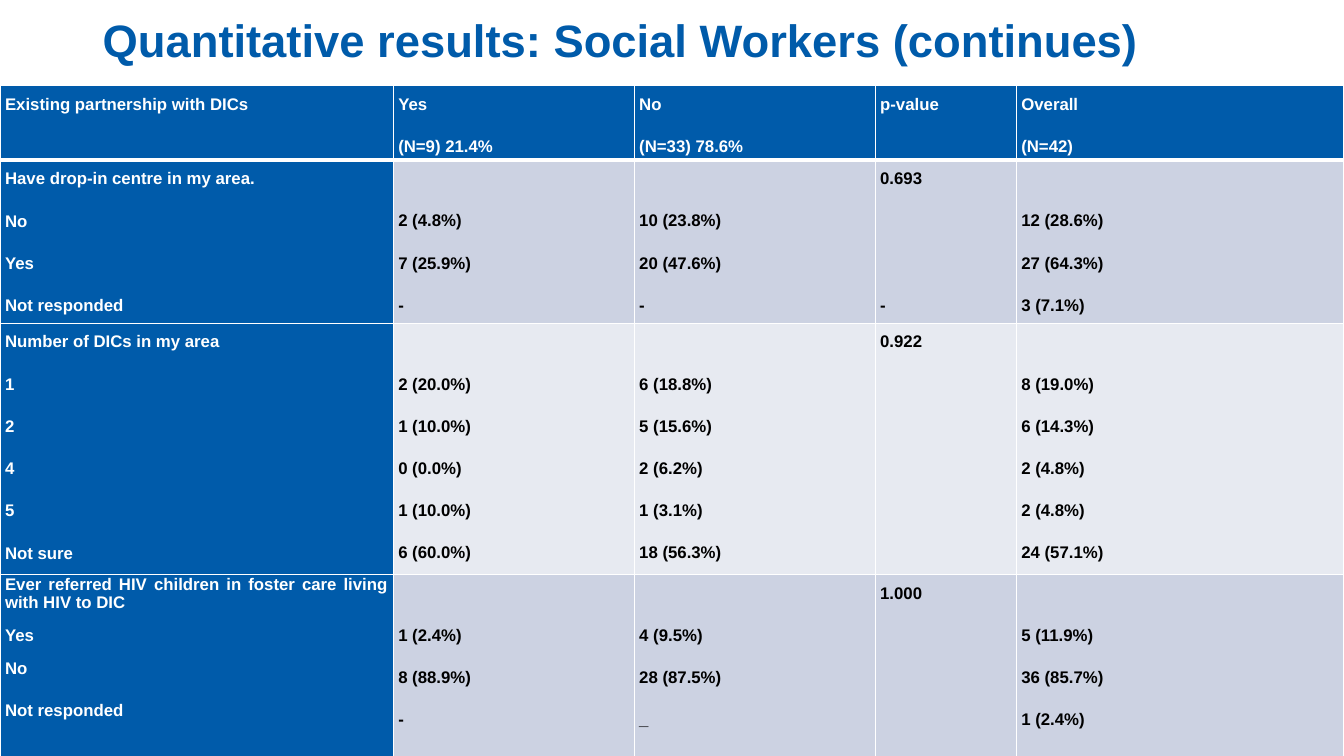
from lxml.etree import SubElement
from pptx import Presentation
from pptx.dml.color import RGBColor
from pptx.enum.text import MSO_ANCHOR, PP_ALIGN
from pptx.oxml.ns import qn
from pptx.util import Inches, Pt

HUES = {"blue": "005BAA", "white": "FFFFFF", "black": "000000",
        "dark": "CCD2E2", "light": "E7EAF1"}
STEP = 30.1  # points from one table line to the next


def write(frame, text, size=12, hue="black", align=PP_ALIGN.JUSTIFY,
          lead=1.5, after=10, tight=0):
    """Write lines split by |; an empty line becomes a gap above the next."""
    gap, first = 0, True
    for pos, line in enumerate(text.split("|")):
        if not line:
            gap += 1
            continue
        para = frame.paragraphs[0] if first else frame.add_paragraph()
        if first:
            frame.margin_top = frame.margin_top + Pt(gap * STEP)
        elif gap:
            para.space_before = Pt(gap * STEP)
        gap, first = 0, False
        para.alignment = align
        para.line_spacing = 1.0 if pos < tight else lead
        para.space_after = Pt(after)
        run = para.add_run()
        run.text = line
        run.font.name, run.font.size, run.font.bold = "Arial", Pt(size), True
        run.font.color.rgb = RGBColor.from_string(HUES[hue])


def edge(cell, top, base):
    """Draw white borders round a cell, widths in points."""
    props = cell._tc.get_or_add_tcPr()
    for tag, width in (("lnL", 1), ("lnR", 1), ("lnT", top), ("lnB", base)):
        line = SubElement(props, qn("a:" + tag), w=str(Pt(width)))
        fill = SubElement(line, qn("a:solidFill"))
        SubElement(fill, qn("a:srgbClr"), val=HUES["white"])


deck = Presentation()
deck.slide_width, deck.slide_height = Inches(13.33), Inches(7.5)
slide = deck.slides.add_slide(deck.slide_layouts[6])

# Title
title = slide.shapes.add_textbox(Inches(0.92), Inches(0.1), Inches(11.5), Inches(0.65))
title.text_frame.word_wrap = True
title.text_frame.vertical_anchor = MSO_ANCHOR.MIDDLE
write(title.text_frame, "Quantitative results: Social Workers (continues)",
      size=32.4, hue="blue", align=PP_ALIGN.LEFT, lead=0.9, after=0)

# Table data
DATA = [
    ["Existing partnership with DICs", "Yes|(N=9) 21.4%", "No|(N=33) 78.6%",
     "p-value", "Overall|(N=42)"],
    ["Have drop-in centre in my area.|No|Yes|Not responded",
     "|2 (4.8%)|7 (25.9%)|-", "|10 (23.8%)|20 (47.6%)|-", "0.693|||-",
     "|12 (28.6%)|27 (64.3%)|3 (7.1%)"],
    ["Number of DICs in my area|1|2|4|5|Not sure",
     "|2 (20.0%)|1 (10.0%)|0 (0.0%)|1 (10.0%)|6 (60.0%)",
     "|6 (18.8%)|5 (15.6%)|2 (6.2%)|1 (3.1%)|18 (56.3%)", "0.922",
     "|8 (19.0%)|6 (14.3%)|2 (4.8%)|2 (4.8%)|24 (57.1%)"],
    ["Ever referred HIV children in foster care living with HIV to DIC|Yes|No|Not responded",
     "|1 (2.4%)|8 (88.9%)|-", "|4 (9.5%)|28 (87.5%)|_", "1.000",
     "|5 (11.9%)|36 (85.7%)|1 (2.4%)"],
]
WIDE = [3.9, 2.39, 2.39, 1.4, 3.25]
TALL = [0.7, 1.58, 2.45, 1.9]

# Table
table = slide.shapes.add_table(len(TALL), len(WIDE), Inches(0), Inches(0.85),
                               Inches(sum(WIDE)), Inches(sum(TALL))).table
table.horz_banding = False
for col, width in zip(table.columns, WIDE):
    col.width = Inches(width)
for row, height in zip(table.rows, TALL):
    row.height = Inches(height)

for r, line in enumerate(DATA):
    for c, text in enumerate(line):
        cell = table.cell(r, c)
        head = r == 0 or c == 0
        cell.margin_left = cell.margin_right = Inches(0.05)
        cell.margin_top = cell.margin_bottom = 0
        edge(cell, top=3 if r == 1 else 1, base=3 if r == 0 else 1)
        cell.fill.solid()
        back = "blue" if head else "dark" if r % 2 else "light"
        cell.fill.fore_color.rgb = RGBColor.from_string(HUES[back])
        write(cell.text_frame, text, hue="white" if head else "black",
              tight=3 if (r, c) == (3, 0) else 0)
        # Leading gaps in a cell belong to the cell margin
        skip = len(text) - len(text.lstrip("|"))
        cell.margin_top = Pt(skip * STEP)

deck.save("out.pptx")
